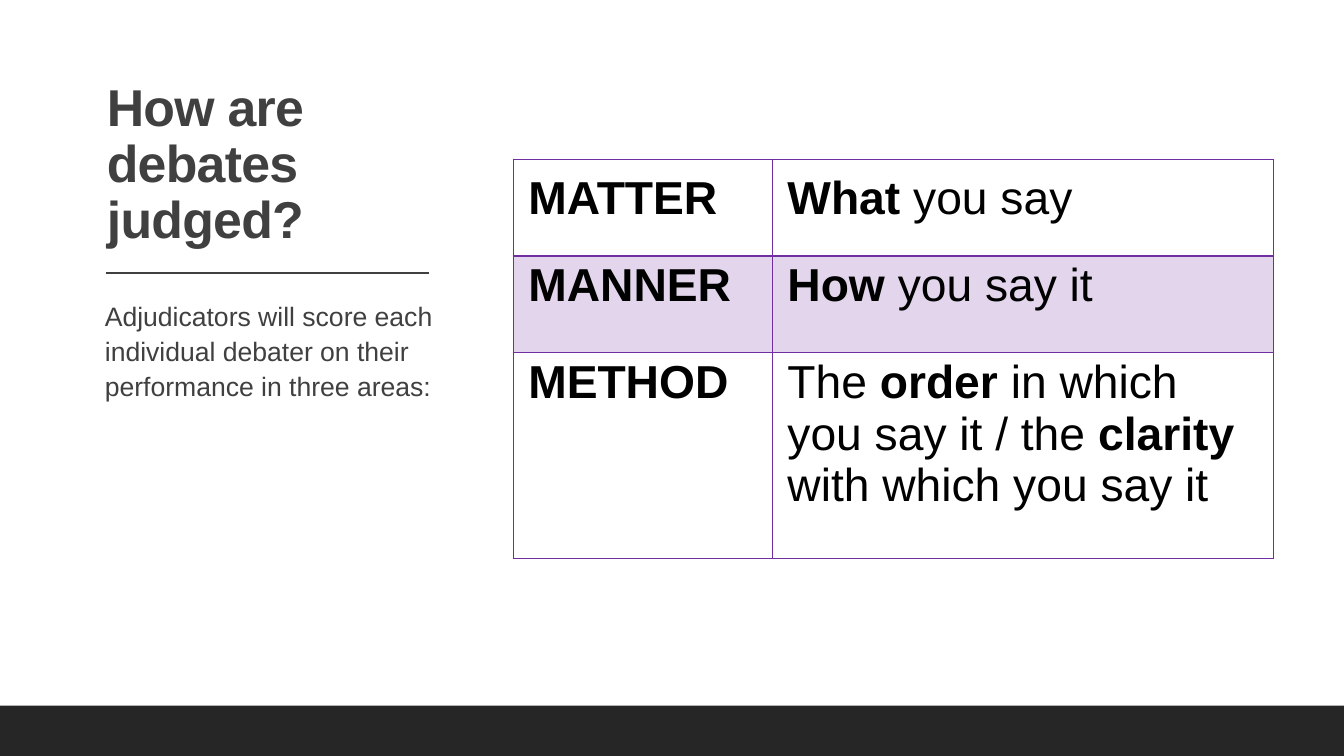
from lxml.etree import SubElement
from pptx import Presentation
from pptx.dml.color import RGBColor
from pptx.enum.shapes import MSO_CONNECTOR, MSO_SHAPE
from pptx.enum.text import MSO_ANCHOR, MSO_AUTO_SIZE, PP_ALIGN
from pptx.oxml.ns import qn
from pptx.util import Inches, Pt

PURPLE, GREY, DARK, WHITE, BLACK = "702FA0", "404040", "262626", "FFFFFF", "000000"
COLUMN_WIDTHS = (2.57, 4.97)
ROW_HEIGHTS = (0.96, 0.96, 2.04)
CRITERIA = (
    ([("MATTER", True)], [("What ", True), ("you say", False)]),
    ([("MANNER", True)], [("How", True), (" you say it", False)]),
    ([("METHOD", True)], [("The ", False), ("order", True),
                          (" in which you say it / the ", False), ("clarity", True),
                          (" with which you say it", False)]),
)


def paint(fill, color):
    """Give a fill one solid colour."""
    fill.solid()
    fill.fore_color.rgb = RGBColor.from_string(color)


def set_font(font, size, color):
    """Set the Arial face, size and colour of a font."""
    font.name = "Arial"
    font.size = Pt(size)
    font.color.rgb = RGBColor.from_string(color)


def place(shape, left, top, width, height):
    """Move and size a shape, in inches."""
    shape.left, shape.top = Inches(left), Inches(top)
    shape.width, shape.height = Inches(width), Inches(height)


def add_title(slide, text):
    """Fill the title placeholder."""
    title = slide.shapes.title
    place(title, 0.96, 0.7, 3.48, 1.83)
    frame = title.text_frame
    frame.text = text
    frame.auto_size = MSO_AUTO_SIZE.NONE
    frame.vertical_anchor = MSO_ANCHOR.BOTTOM
    heading = frame.paragraphs[0]
    heading.alignment = PP_ALIGN.LEFT
    heading.line_spacing = 0.9
    set_font(heading.font, 37, GREY)
    heading.font.bold = True
    heading._p.pPr.find(qn("a:defRPr")).set("spc", "-50")


def add_intro(slide, text):
    """Fill the body placeholder with a blank-bulleted paragraph."""
    body = slide.placeholders[1]
    place(body, 0.94, 2.89, 3.51, 3.53)
    frame = body.text_frame
    frame.text = text
    frame.auto_size = MSO_AUTO_SIZE.NONE
    frame.margin_left = frame.margin_right = 0
    intro = frame.paragraphs[0]
    properties = intro._p.get_or_add_pPr()
    properties.set("marL", str(Inches(0.1)))
    properties.set("indent", str(Inches(-0.1)))
    bullet_color = SubElement(properties, qn("a:buClr"))
    SubElement(bullet_color, qn("a:srgbClr"), val=PURPLE)
    SubElement(properties, qn("a:buChar"), char=" ")
    intro.line_spacing = 1.1
    intro.space_before = Pt(0)
    intro.space_after = Pt(2)
    set_font(intro.font, 19, GREY)


def add_rule(slide, left, right, y):
    """Draw the horizontal line under the title."""
    rule = slide.shapes.add_connector(
        MSO_CONNECTOR.STRAIGHT, Inches(left), Inches(y), Inches(right), Inches(y))
    rule.line.color.rgb = RGBColor.from_string(GREY)
    rule.line.width = Pt(1)
    SubElement(rule._element.spPr, qn("a:effectLst"))


def add_footer_band(slide):
    """Draw the dark band along the bottom edge."""
    band = slide.shapes.add_shape(
        MSO_SHAPE.RECTANGLE, 0, Inches(7), Inches(13.33), Inches(0.5))
    band.shadow.inherit = False
    paint(band.fill, DARK)
    band.line.fill.background()


def add_borders(cell, bottom_width):
    """Outline a cell in purple."""
    properties = cell._tc.get_or_add_tcPr()
    for side, width in (("L", 1), ("R", 1), ("T", 1), ("B", bottom_width)):
        border = SubElement(properties, qn(f"a:ln{side}"), w=str(Pt(width)))
        solid = SubElement(border, qn("a:solidFill"))
        SubElement(solid, qn("a:srgbClr"), val=PURPLE)


def shade(cell):
    """Fill a cell with purple at 20% opacity."""
    paint(cell.fill, PURPLE)
    color = cell._tc.tcPr.find(qn("a:solidFill")).find(qn("a:srgbClr"))
    SubElement(color, qn("a:alpha"), val="20000")


def fill_cell(cell, pieces, row):
    """Write and format one cell of the criteria table."""
    cell.margin_left, cell.margin_right = Inches(0.15), Inches(0.21)
    cell.margin_top, cell.margin_bottom = Inches(0.04), Inches(0.32)
    cell.vertical_anchor = MSO_ANCHOR.BOTTOM if row == 0 else MSO_ANCHOR.TOP
    add_borders(cell, 2 if row == 0 else 1)
    if row == 1:
        shade(cell)
    else:
        cell.fill.background()
    paragraph = cell.text_frame.paragraphs[0]
    set_font(paragraph.font, 33, BLACK)
    for text, bold in pieces:
        run = paragraph.add_run()
        run.text = text
        run.font.bold = bold


def add_criteria_table(slide):
    """Add the table of judging criteria."""
    table = slide.shapes.add_table(
        len(CRITERIA), len(COLUMN_WIDTHS), Inches(5.09), Inches(1.58),
        Inches(sum(COLUMN_WIDTHS)), Inches(sum(ROW_HEIGHTS))).table
    table.first_row = table.horz_banding = False
    for column, width in zip(table.columns, COLUMN_WIDTHS):
        column.width = Inches(width)
    for row, height in enumerate(ROW_HEIGHTS):
        table.rows[row].height = Inches(height)
        for column, pieces in enumerate(CRITERIA[row]):
            fill_cell(table.cell(row, column), pieces, row)


def main():
    """Build and save the slide."""
    presentation = Presentation()
    presentation.slide_width, presentation.slide_height = Inches(13.33), Inches(7.5)
    slide = presentation.slides.add_slide(presentation.slide_layouts[1])
    paint(slide.background.fill, WHITE)
    add_title(slide, "How are debates judged?")
    add_rule(slide, 1.05, 4.25, 2.71)
    add_intro(slide, "Adjudicators will score each individual debater "
                     "on their performance in three areas:")
    add_footer_band(slide)
    add_criteria_table(slide)
    presentation.save("out.pptx")


if __name__ == "__main__":
    main()
